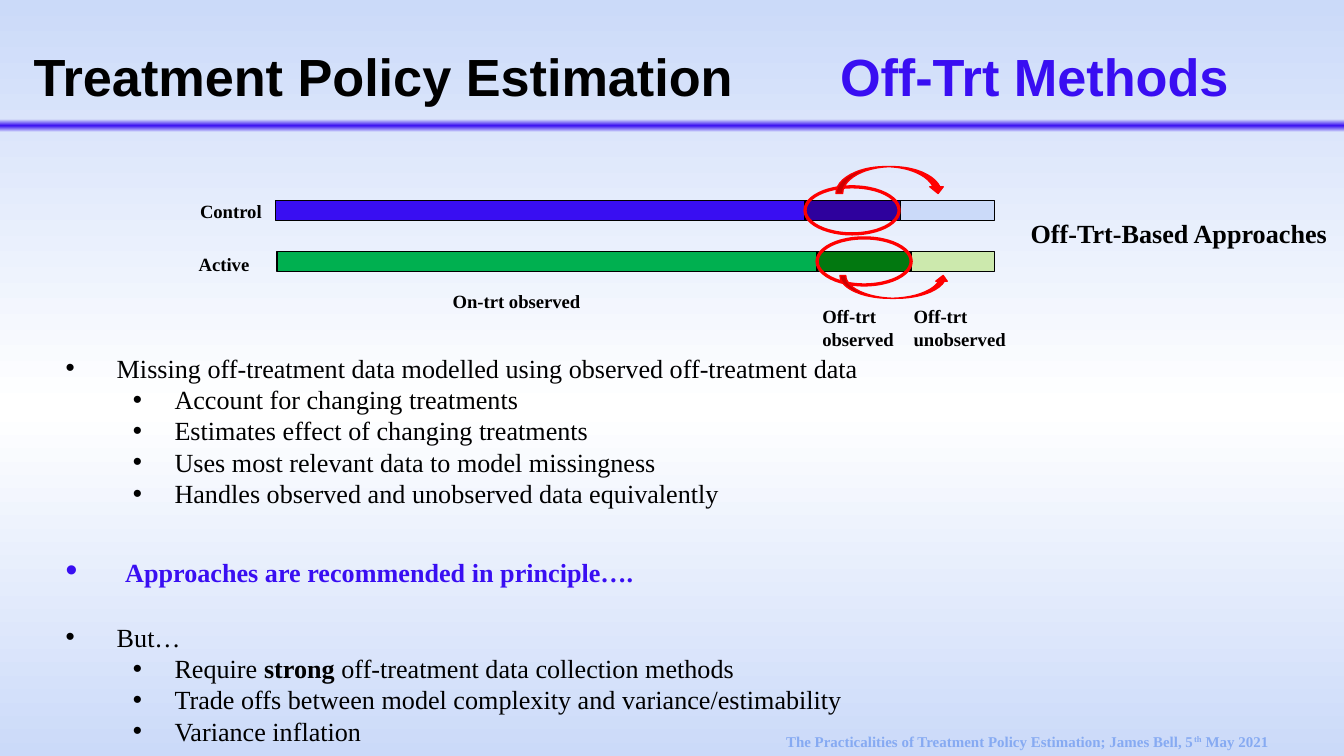
from copy import deepcopy

from lxml.etree import SubElement
from pptx import Presentation
from pptx.dml.color import RGBColor
from pptx.enum.shapes import MSO_SHAPE
from pptx.enum.text import MSO_ANCHOR, MSO_AUTO_SIZE, PP_ALIGN
from pptx.oxml.ns import qn
from pptx.util import Inches, Pt

COLORS = {
    "black": "000000", "violet": "390EF2", "indigo": "2E019D", "pale blue": "CBDAF9",
    "green": "00B050", "dark green": "027810", "pale green": "CCE9AD",
    "red": "FF0000", "white": "FFFFFF", "footer blue": "86AAF2",
}
BAR_ROWS = [
    (1.49, [2.05, 5.99, 6.7, 7.4], ["violet", "indigo", "pale blue"]),
    (1.87, [2.06, 6.08, 6.78, 7.4], ["green", "dark green", "pale green"]),
]
LABELS = [
    ("Control", 1.39, 1.44, 0.67, 0.27, False),
    ("Active", 1.38, 1.83, 0.59, 0.27, False),
    ("On-trt observed", 3.27, 2.11, 1.17, 0.27, False),
    ("Off-trt observed", 6.02, 2.22, 1.02, 0.44, True),
    ("Off-trt unobserved", 6.7, 2.22, 1.27, 0.44, True),
]
BULLETS = [
    (0, 0, "Missing off-treatment data modelled using observed off-treatment data"),
    (1, 0, "Account for changing treatments"),
    (1, 0, "Estimates effect of changing treatments"),
    (1, 0, "Uses most relevant data to model missingness"),
    (1, 0, "Handles observed and unobserved data equivalently"),
    (0, 21.7, [(" ", {"size": 18, "color": "violet", "bold": True}),
               ("Approaches are recommended in principle….", {"color": "violet", "bold": True})]),
    (0, 16.8, "But…"),
    (1, 0, [("Require ", {}), ("strong", {"bold": True}),
            (" off-treatment data collection methods", {})]),
    (1, 0, "Trade offs between model complexity and variance/estimability"),
    (1, 0, "Variance inflation"),
]
INDENTS = [(0.38, -0.38), (0.81, -0.31)]


def rgb(name):
    """Return the named colour."""
    return RGBColor.from_string(COLORS[name])


def write_text(paragraph, content, **text_format):
    """Add text, or (text, overrides) pairs, as formatted runs."""
    pieces = [(content, {})] if isinstance(content, str) else content
    for text, overrides in pieces:
        style = {"size": 14, "font": "Times New Roman", "color": "black", "bold": False,
                 "baseline": 0, **text_format, **overrides}
        run = paragraph.add_run()
        run.text = text
        run.font.size = Pt(style["size"])
        run.font.name = style["font"]
        run.font.bold = style["bold"]
        run.font.color.rgb = rgb(style["color"])
        if style["baseline"]:
            run._r.get_or_add_rPr().set("baseline", str(style["baseline"] * 1000))


def add_text_box(slide, left, top, width, height, wrap=True):
    """Add an empty text box and return its frame."""
    box = slide.shapes.add_textbox(Inches(left), Inches(top), Inches(width), Inches(height))
    box.text_frame.word_wrap = wrap
    return box.text_frame


def add_shape(slide, kind, left, top, width, height, fill=None, line=None, line_width=0.75):
    """Add a preset shape without shadow."""
    shape = slide.shapes.add_shape(kind, Inches(left), Inches(top), Inches(width), Inches(height))
    shape.shadow.inherit = False
    if fill:
        shape.fill.solid()
        shape.fill.fore_color.rgb = rgb(fill)
    else:
        shape.fill.background()
    if line:
        shape.line.color.rgb = rgb(line)
        shape.line.width = Pt(line_width)
    else:
        shape.line.fill.background()
    return shape


def set_gradient(fill, element, angle, stops):
    """Fill with (position, colour, alpha) stops, all in percent."""
    fill.gradient()
    fill.gradient_angle = angle
    stop_list = element.find(".//" + qn("a:gsLst"))
    template = deepcopy(stop_list[0])
    stop_list.clear()
    for position, color, alpha in stops:
        stop = deepcopy(template)
        stop.clear()
        stop.set("pos", str(position * 1000))
        value = SubElement(stop, qn("a:srgbClr"), val=COLORS[color])
        if alpha < 100:
            SubElement(value, qn("a:alpha"), val=str(alpha * 1000))
        stop_list.append(stop)


def add_title(slide):
    """Place the two-colour title above the glowing rule."""
    rule = add_shape(slide, MSO_SHAPE.RECTANGLE, 0, 0.89, 10, 0.09)
    set_gradient(rule.fill, rule.element, 270,
                 [(0, "violet", 0), (50, "violet", 100), (100, "violet", 0)])
    title = slide.shapes.title
    title.left, title.top, title.width, title.height = map(Inches, (0.15, 0.23, 10.01, 0.6))
    frame = title.text_frame
    frame.auto_size = MSO_AUTO_SIZE.NONE
    frame.vertical_anchor = MSO_ANCHOR.TOP
    frame.margin_top = Inches(0.1)
    paragraph = frame.paragraphs[0]
    paragraph.alignment = PP_ALIGN.LEFT
    tabs = SubElement(paragraph._p.get_or_add_pPr(), qn("a:tabLst"))
    SubElement(tabs, qn("a:tab"), pos=str(Inches(6)), algn="l")
    write_text(paragraph, [("Treatment Policy Estimation\t", {}),
                           ("Off-Trt Methods", {"color": "violet"})],
               size=28, font="Arial", bold=True)


def add_bars(slide):
    """Draw the control and active bars with their labels."""
    for top, edges, fills in BAR_ROWS:
        for left, right, fill in zip(edges, edges[1:], fills):
            add_shape(slide, MSO_SHAPE.RECTANGLE, left, top, right - left, 0.15, fill, "black")
    for text, left, top, width, height, wrap in LABELS:
        frame = add_text_box(slide, left, top, width, height, wrap)
        write_text(frame.paragraphs[0], text, size=10, bold=True)
    for top, edges, fills in BAR_ROWS:
        add_shape(slide, MSO_SHAPE.OVAL, edges[1], top - 0.1, 0.7, 0.35,
                  line="red", line_width=1.75)
    add_shape(slide, MSO_SHAPE.CURVED_DOWN_ARROW, 6.22, 1.24, 0.81, 0.2, "red", "red")
    add_shape(slide, MSO_SHAPE.CURVED_UP_ARROW, 6.25, 2.05, 0.81, 0.17, "red", "red")
    heading = add_text_box(slide, 7.57, 1.57, 2.43, 0.34, False)
    write_text(heading.paragraphs[0], "Off-Trt-Based Approaches", bold=True)


def add_bullets(slide):
    """Write the two-level bullet list."""
    frame = add_text_box(slide, 0.39, 2.57, 9.21, 3.06)
    for index, (level, gap, content) in enumerate(BULLETS):
        paragraph = frame.add_paragraph() if index else frame.paragraphs[0]
        paragraph.level = level
        paragraph.space_before = Pt(gap)
        properties = paragraph._p.get_or_add_pPr()
        margin, indent = INDENTS[level]
        properties.set("marL", str(Inches(margin)))
        properties.set("indent", str(Inches(indent)))
        SubElement(properties, qn("a:buFont"), typeface="Arial")
        SubElement(properties, qn("a:buChar"), char="•")
        write_text(paragraph, content)


def add_footer(slide):
    """Write the talk reference at the bottom right."""
    frame = add_text_box(slide, 5.75, 5.4, 4.25, 0.23)
    write_text(frame.paragraphs[0],
               [("The Practicalities of Treatment Policy Estimation; James Bell, 5", {}),
                ("th", {"baseline": 30}), (" May 2021", {})],
               size=8, color="footer blue", bold=True)


def main():
    """Build and save the slide."""
    presentation = Presentation()
    presentation.slide_width = Inches(10)
    presentation.slide_height = Inches(10) * 9 // 16
    slide = presentation.slides.add_slide(presentation.slide_layouts[5])
    set_gradient(slide.background.fill, slide.element, 90,
                 [(0, "pale blue", 100), (46, "white", 100), (100, "pale blue", 100)])
    add_title(slide)
    add_bars(slide)
    add_bullets(slide)
    add_footer(slide)
    presentation.save("out.pptx")


if __name__ == "__main__":
    main()
